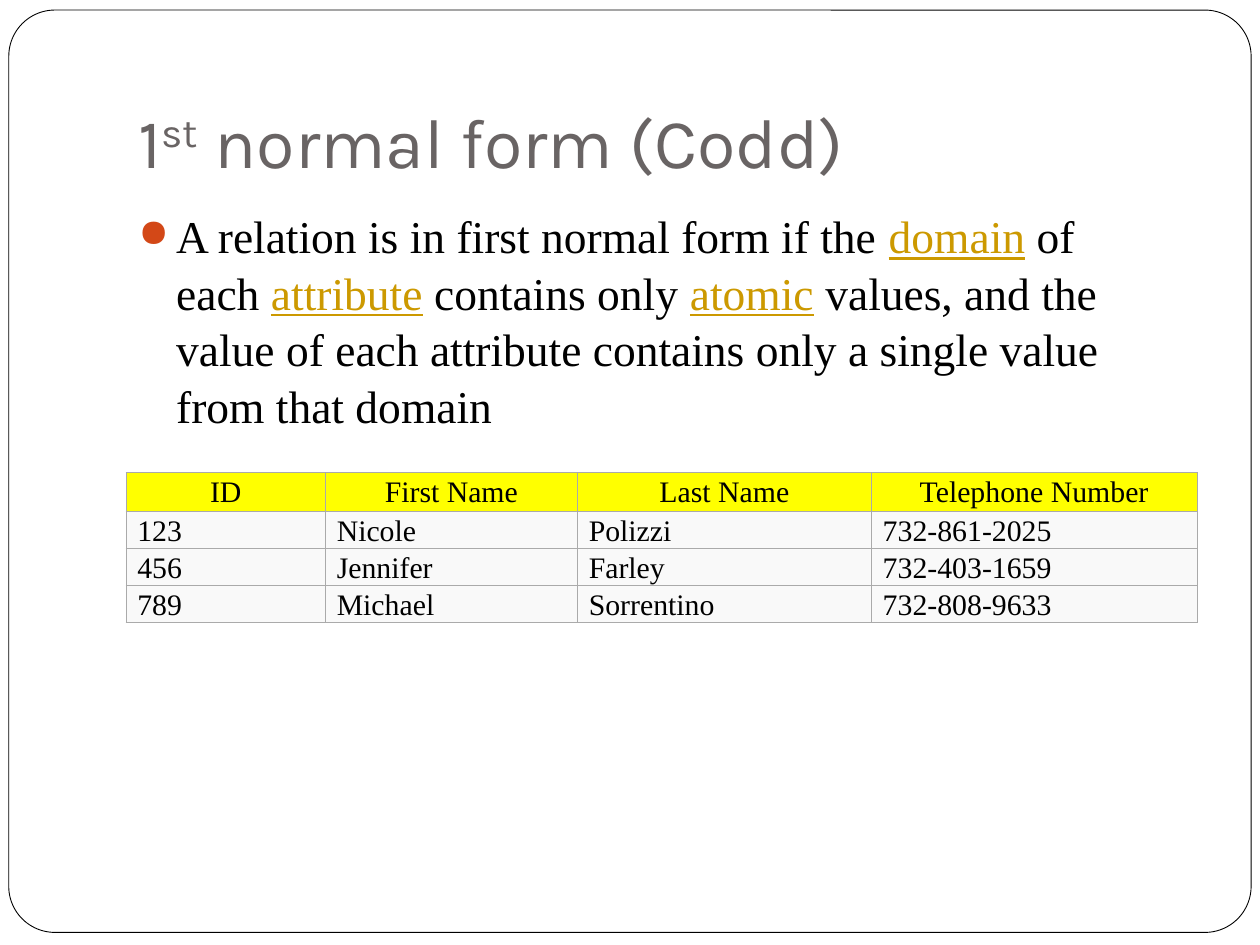
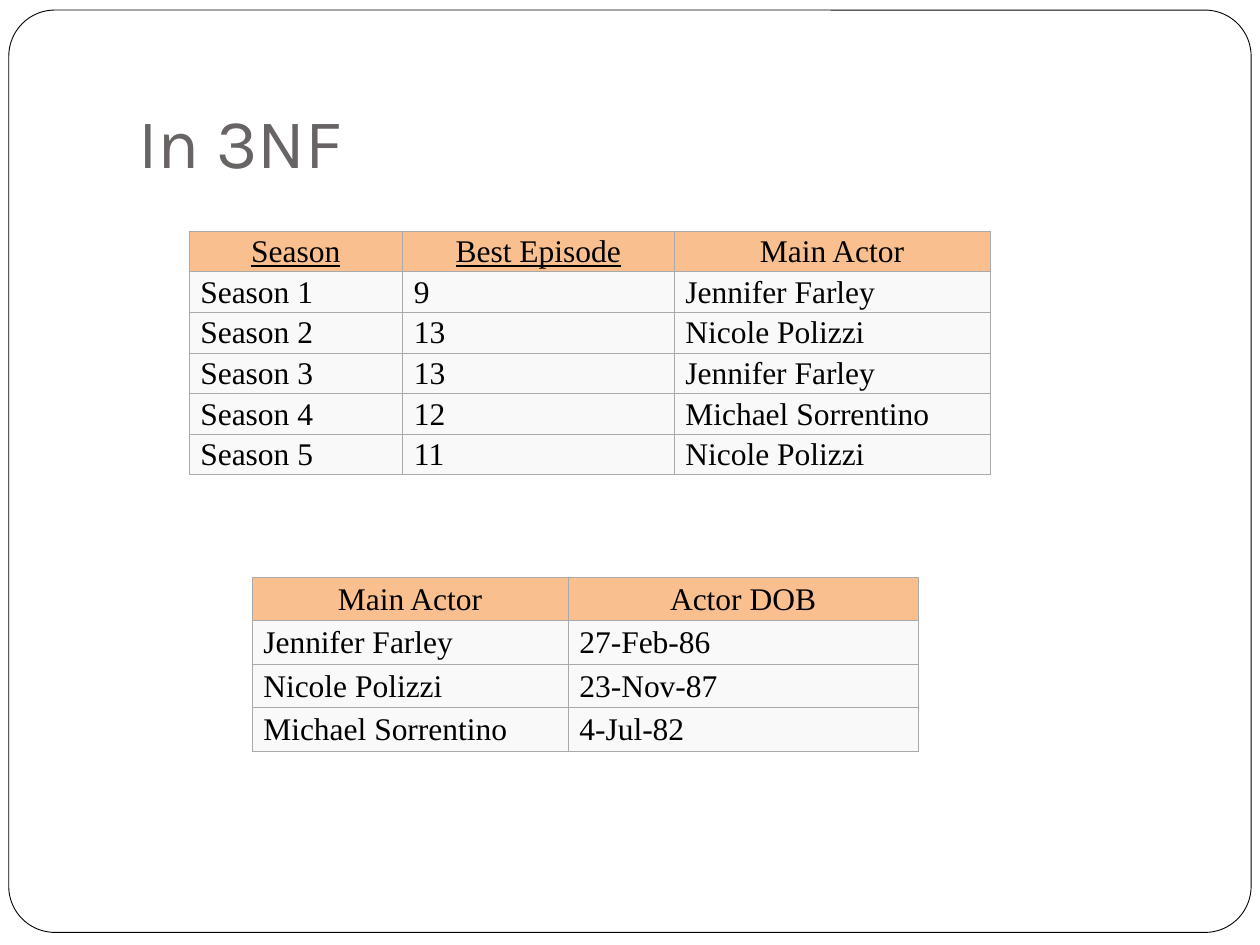
from dataclasses import dataclass

from lxml import etree
from pptx import Presentation
from pptx.dml.color import RGBColor
from pptx.enum.shapes import MSO_SHAPE
from pptx.enum.text import MSO_ANCHOR, PP_ALIGN
from pptx.oxml.ns import qn
from pptx.util import Inches, Pt

ROUNDED = MSO_SHAPE.ROUNDED_RECTANGLE
MIDDLE, BOTTOM = MSO_ANCHOR.MIDDLE, MSO_ANCHOR.BOTTOM
CENTER, LEFT = PP_ALIGN.CENTER, PP_ALIGN.LEFT
NBSP = chr(160)


@dataclass(frozen=True)
class Theme:
    title_font: str = "Karla"
    body_font: str = "Times New Roman"
    title_size: float = 40
    body_size: float = 26
    title: str = "696464"
    text: str = "000000"
    term: str = "CC9900"
    bullet: str = "D34817"
    paper: str = "FFFFFF"
    border: str = "AAAAAA"
    row: str = "F9F9F9"
    yellow: str = "FFFF00"
    orange: str = "FABF8F"
    line: float = 0.5


THEME = Theme()

# Content: lengths are in units of a grid of 120 columns by 90 rows
SLIDE_WIDTH, SLIDE_HEIGHT = 10, 7.5
COLUMNS = 120
FRAME_BOX = (0.84, 0.96, 118.32, 87.84)
TITLE_BOX = (12, 3.6, 102, 15)
BODY_BOX = (12, 19, 102, 60)

# Runs are (text, style)
SLIDES = [
    {
        "title": [("1", ""), ("st", "superscript"), (" normal form (Codd)", "")],
        "body": [
            (f"A relation is in first normal form if the{NBSP}", ""),
            ("domain", "term"),
            (f"{NBSP}of each{NBSP}", ""),
            ("attribute", "term"),
            (f"{NBSP}contains only{NBSP}", ""),
            ("atomic", "term"),
            (" values, and the value of each attribute contains only "
             "a single value from that domain", ""),
        ],
        "tables": [{
            "corner": (12, 45), "widths": (19, 24, 28, 31),
            "header_height": 3.75, "row_height": 3.48,
            "size": 17, "header_fill": THEME.yellow, "keys": (),
            "rows": [
                ("ID", "First Name", "Last Name", "Telephone Number"),
                ("123", "Nicole", "Polizzi", "732-861-2025"),
                ("456", "Jennifer", "Farley", "732-403-1659"),
                ("789", "Michael", "Sorrentino", "732-808-9633"),
            ],
        }],
    },
    {
        "title": [("In 3NF", "")],
        "body": [],
        "tables": [
            {
                "corner": (18, 22), "widths": (20.35, 25.85, 30.1),
                "header_height": 3.87, "row_height": 3.87,
                "size": 18, "header_fill": THEME.orange,
                "keys": ("Season", "Best Episode"),
                "rows": [
                    ("Season", "Best Episode", "Main Actor"),
                    ("Season 1", "9", "Jennifer Farley"),
                    ("Season 2", "13", "Nicole Polizzi"),
                    ("Season 3", "13", "Jennifer Farley"),
                    ("Season 4", "12", "Michael Sorrentino"),
                    ("Season 5", "11", "Nicole Polizzi"),
                ],
            },
            {
                "corner": (24, 55), "widths": (30.1, 33.35),
                "header_height": 4.13, "row_height": 4.13,
                "size": 18, "header_fill": THEME.orange, "keys": (),
                "rows": [
                    ("Main Actor", "Actor DOB"),
                    ("Jennifer Farley", "27-Feb-86"),
                    ("Nicole Polizzi", "23-Nov-87"),
                    ("Michael Sorrentino", "4-Jul-82"),
                ],
            },
        ],
    },
]


def grid(units):
    return Inches(units * SLIDE_WIDTH / COLUMNS)


def place(box):
    return [grid(units) for units in box]


def color(value):
    return RGBColor.from_string(value)


def set_margins(target, left, top, right, bottom):
    target.margin_left, target.margin_top = Inches(left), Inches(top)
    target.margin_right, target.margin_bottom = Inches(right), Inches(bottom)


def add_run(paragraph, text, font_name, size, font_color, style=""):
    run = paragraph.add_run()
    run.text = text
    font = run.font
    font.name, font.size = font_name, Pt(size)
    font.color.rgb = color(THEME.term if style == "term" else font_color)
    if style in ("term", "key"):
        font.underline = True
    if style == "superscript":
        run._r.get_or_add_rPr().set("baseline", "30000")


def add_text_box(slide, box):
    frame = slide.shapes.add_textbox(*place(box)).text_frame
    frame.word_wrap = True
    return frame


def add_frame(slide):
    shape = slide.shapes.add_shape(ROUNDED, *place(FRAME_BOX))
    shape.adjustments[0] = 0.05
    shape.shadow.inherit = False
    shape.fill.solid()
    shape.fill.fore_color.rgb = color(THEME.paper)
    shape.line.color.rgb = color(THEME.text)
    shape.line.width = Pt(THEME.line)


def add_title(slide, runs):
    frame = add_text_box(slide, TITLE_BOX)
    frame.vertical_anchor = BOTTOM
    set_margins(frame, 0.1, 0.05, 0.1, 0.1)
    for text, style in runs:
        add_run(frame.paragraphs[0], text, THEME.title_font,
                THEME.title_size, THEME.title, style)


def add_bullet(paragraph):
    properties = paragraph._p.get_or_add_pPr()
    properties.set("marL", str(Inches(0.3)))
    properties.set("indent", str(-Inches(0.3)))
    bullet_color = etree.SubElement(properties, qn("a:buClr"))
    etree.SubElement(bullet_color, qn("a:srgbClr"), val=THEME.bullet)
    etree.SubElement(properties, qn("a:buSzPct"), val="85000")
    etree.SubElement(properties, qn("a:buChar"), char="●")


def add_body(slide, runs):
    paragraph = add_text_box(slide, BODY_BOX).paragraphs[0]
    paragraph.space_before = Pt(5.8)
    paragraph.line_spacing = 1.04
    add_bullet(paragraph)
    for text, style in runs:
        add_run(paragraph, text, THEME.body_font, THEME.body_size,
                THEME.text, style)


def add_borders(cell):
    properties = cell._tc.get_or_add_tcPr()
    for index, side in enumerate("LRTB"):
        line = etree.Element(qn(f"a:ln{side}"), w=str(Pt(THEME.line)))
        fill = etree.SubElement(line, qn("a:solidFill"))
        etree.SubElement(fill, qn("a:srgbClr"), val=THEME.border)
        properties.insert(index, line)


def fill_cell(cell, text, data, is_header):
    cell.fill.solid()
    cell.fill.fore_color.rgb = color(data["header_fill"] if is_header else THEME.row)
    add_borders(cell)
    cell.vertical_anchor = MIDDLE
    set_margins(cell, 0.01 if is_header else 0.09, 0.01, 0.01, 0)
    paragraph = cell.text_frame.paragraphs[0]
    paragraph.alignment = CENTER if is_header else LEFT
    style = "key" if is_header and text in data["keys"] else ""
    add_run(paragraph, text, THEME.body_font, data["size"], THEME.text, style)


def add_data_table(slide, data):
    rows, widths = data["rows"], data["widths"]
    heights = [data["header_height"]] + [data["row_height"]] * (len(rows) - 1)
    box = (*data["corner"], sum(widths), sum(heights))
    table = slide.shapes.add_table(len(rows), len(widths), *place(box)).table
    table.first_row = table.horz_banding = False
    for column, width in zip(table.columns, widths):
        column.width = grid(width)
    for row_index, (row, height) in enumerate(zip(rows, heights)):
        table.rows[row_index].height = grid(height)
        for column_index, text in enumerate(row):
            fill_cell(table.cell(row_index, column_index), text, data, row_index == 0)


def main():
    presentation = Presentation()
    presentation.slide_width = Inches(SLIDE_WIDTH)
    presentation.slide_height = Inches(SLIDE_HEIGHT)
    for content in SLIDES:
        slide = presentation.slides.add_slide(presentation.slide_layouts[6])
        add_frame(slide)
        add_title(slide, content["title"])
        if content["body"]:
            add_body(slide, content["body"])
        for data in content["tables"]:
            add_data_table(slide, data)
    presentation.save("out.pptx")


if __name__ == "__main__":
    main()
